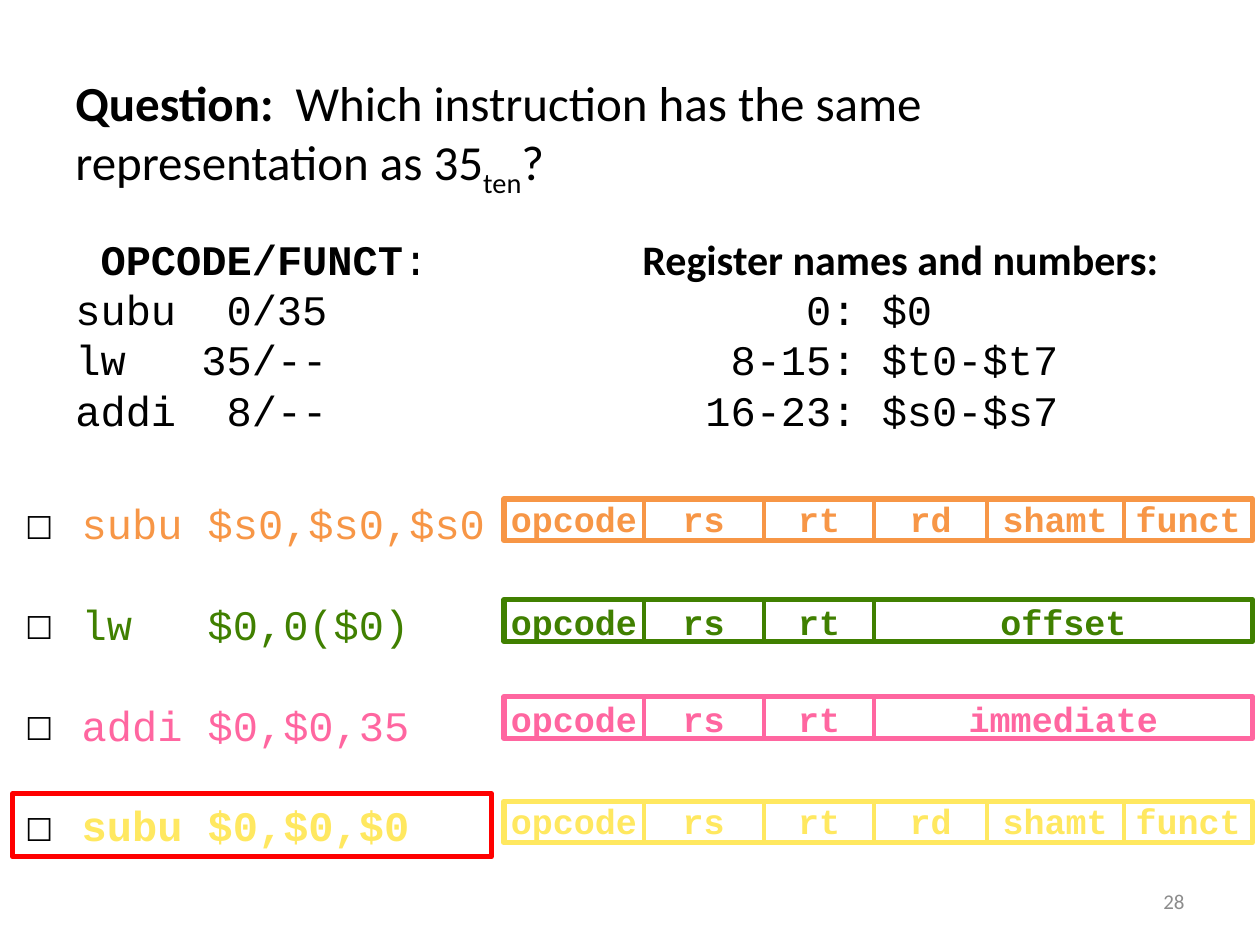
import pptx
import pptx.dml.color
import pptx.enum.shapes
import pptx.enum.text
import pptx.oxml
import pptx.oxml.ns
import pptx.util
from pptx.util import Inches

CODE = "Courier New"
BODY = "Calibri"
A_NS = pptx.oxml.ns.nsdecls("a")
ALIGN = pptx.enum.text.PP_ALIGN

EDGES = [4, 5.11, 6.06, 6.94, 7.83, 8.92, 9.94]
BOX_HEIGHT = 0.33
R_FIELDS = ["opcode", "rs", "rt", "rd", "shamt", "funct"]
I_FIELDS = ["opcode", "rs", "rt"]

# instruction, colour, fields, top of field text, top of field box, is the answer
CHOICES = [
    ("subu\t$s0,$s0,$s0", "F79646", R_FIELDS, 3.9, 3.96, False),
    ("lw\t$0,0($0)", "408000", I_FIELDS + ["offset"], 4.72, 4.76, False),
    ("addi\t$0,$0,35", "FF66A0", I_FIELDS + ["immediate"], 5.49, 5.53, False),
    ("subu\t$0,$0,$0", "FFE860", R_FIELDS, 6.3, 6.36, True),
]
CODES = ["subu\t0/35\t0:\t$0", "lw\t35/--\t8-15:\t$t0-$t7", "addi\t8/--\t16-23:\t$s0-$s7"]


def rgb(color):
    return pptx.dml.color.RGBColor.from_string(color)


def add_run(p, text, size, font=BODY, color="000000", bold=False):
    r = p.add_run()
    r.text = text
    r.font.size = pptx.util.Pt(size)
    r.font.name = font
    r.font.bold = bold
    r.font.color.rgb = rgb(color)
    return r


def add_text_frame(s, left, top, width, height, wrap=True):
    sp = s.shapes.add_textbox(Inches(left), Inches(top), Inches(width), Inches(height))
    tf = sp.text_frame
    tf.word_wrap = wrap
    tf.auto_size = pptx.enum.text.MSO_AUTO_SIZE.SHAPE_TO_FIT_TEXT
    return tf


def set_tabs(p, *stops):
    """Set tab stops, each a distance in inches and an alignment ("l" or "r")."""
    tabs = "".join(f'<a:tab pos="{Inches(pos)}" algn="{algn}"/>' for pos, algn in stops)
    p._p.get_or_add_pPr().append(pptx.oxml.parse_xml(f"<a:tabLst {A_NS}>{tabs}</a:tabLst>"))


def outline_text(r):
    r.font._element.insert(0, pptx.oxml.parse_xml(
        f'<a:ln {A_NS} w="9525"><a:solidFill><a:srgbClr val="000000"/></a:solidFill></a:ln>'))


def add_frame(s, left, top, width, height, color):
    sp = s.shapes.add_shape(pptx.enum.shapes.MSO_SHAPE.RECTANGLE,
                            Inches(left), Inches(top), Inches(width), Inches(height))
    sp.shadow.inherit = False
    sp.fill.background()
    sp.line.color.rgb = rgb(color)
    sp.line.width = pptx.util.Pt(3)


def add_divider(s, x, top, color):
    line = s.shapes.add_connector(pptx.enum.shapes.MSO_CONNECTOR.STRAIGHT, Inches(x),
                                  Inches(top), Inches(x), Inches(top + BOX_HEIGHT))
    line.line.color.rgb = rgb(color)
    line.line.width = pptx.util.Pt(2.25)
    line._element.spPr.append(pptx.oxml.parse_xml(f"<a:effectLst {A_NS}/>"))


def add_format(s, fields, text_top, box_top, color, answer):
    """Draw an instruction format; its last field takes all the space left."""
    edges = EDGES[:len(fields)] + EDGES[-1:]
    for name, left, right in zip(fields, edges, edges[1:]):
        width = len(name) / 6 + 0.2
        tf = add_text_frame(s, (left + right - width) / 2, text_top, width, 0.43, wrap=False)
        p = tf.paragraphs[0]
        p.alignment = ALIGN.CENTER
        r = add_run(p, name, 20, CODE, color, bold=True)
        if answer:
            outline_text(r)
    add_frame(s, edges[0], box_top, edges[-1] - edges[0], BOX_HEIGHT, color)
    for x in edges[1:-1]:
        add_divider(s, x, box_top, color)


def add_instruction(s, text, top, color, answer):
    p = add_text_frame(s, 0.55, top, 3.4, 0.5).paragraphs[0]
    set_tabs(p, (1, "l"))
    r = add_run(p, text, 24, CODE, color, bold=answer)
    if answer:
        outline_text(r)
    checkbox = add_text_frame(s, 0.1, top + 0.08, 0.45, 0.4, wrap=False)
    add_run(checkbox.paragraphs[0], "☐", 18, "Noto Sans CJK JP")


def add_question(s):
    p = add_text_frame(s, 0.5, 0.53, 9.25, 1.04).paragraphs[0]
    add_run(p, "Question:  ", 28, bold=True)
    add_run(p, "Which instruction has the same representation as 35", 28)
    subscript = add_run(p, "ten", 28)
    subscript.font._element.set("baseline", "-25000")
    add_run(p, "?", 28)


def add_reference(s):
    """List the opcodes and the register numbers in tabbed columns."""
    tf = add_text_frame(s, 0.5, 1.8, 9, 1.72)
    p = tf.paragraphs[0]
    set_tabs(p, (4.5, "l"))
    add_run(p, " OPCODE/FUNCT", 24, CODE, bold=True)
    add_run(p, ":\t", 24, CODE)
    add_run(p, "Register names and numbers:", 24, bold=True)
    for line in CODES:
        p = tf.add_paragraph()
        set_tabs(p, (2, "r"), (6.2, "r"), (6.4, "l"))
        add_run(p, line, 24, CODE)


def add_slide_number(s):
    tf = add_text_frame(s, 7.17, 6.95, 2.33, 0.4)
    tf.auto_size = pptx.enum.text.MSO_AUTO_SIZE.NONE
    tf.vertical_anchor = pptx.enum.text.MSO_ANCHOR.MIDDLE
    p = tf.paragraphs[0]
    p.alignment = ALIGN.RIGHT
    add_run(p, "28", 12, color="8C8C8C")


def main():
    prs = pptx.Presentation()
    prs.slide_width, prs.slide_height = Inches(10), Inches(7.5)
    s = prs.slides.add_slide(prs.slide_layouts[6])
    add_question(s)
    add_reference(s)
    for i, (text, color, fields, text_top, box_top, answer) in enumerate(CHOICES):
        add_instruction(s, text, 3.9 + 0.8 * i, color, answer)
        add_format(s, fields, text_top, box_top, color, answer)
    add_frame(s, 0.1, 6.3, 3.8, 0.5, "FF0000")
    add_slide_number(s)
    prs.save("out.pptx")


if __name__ == "__main__":
    main()
